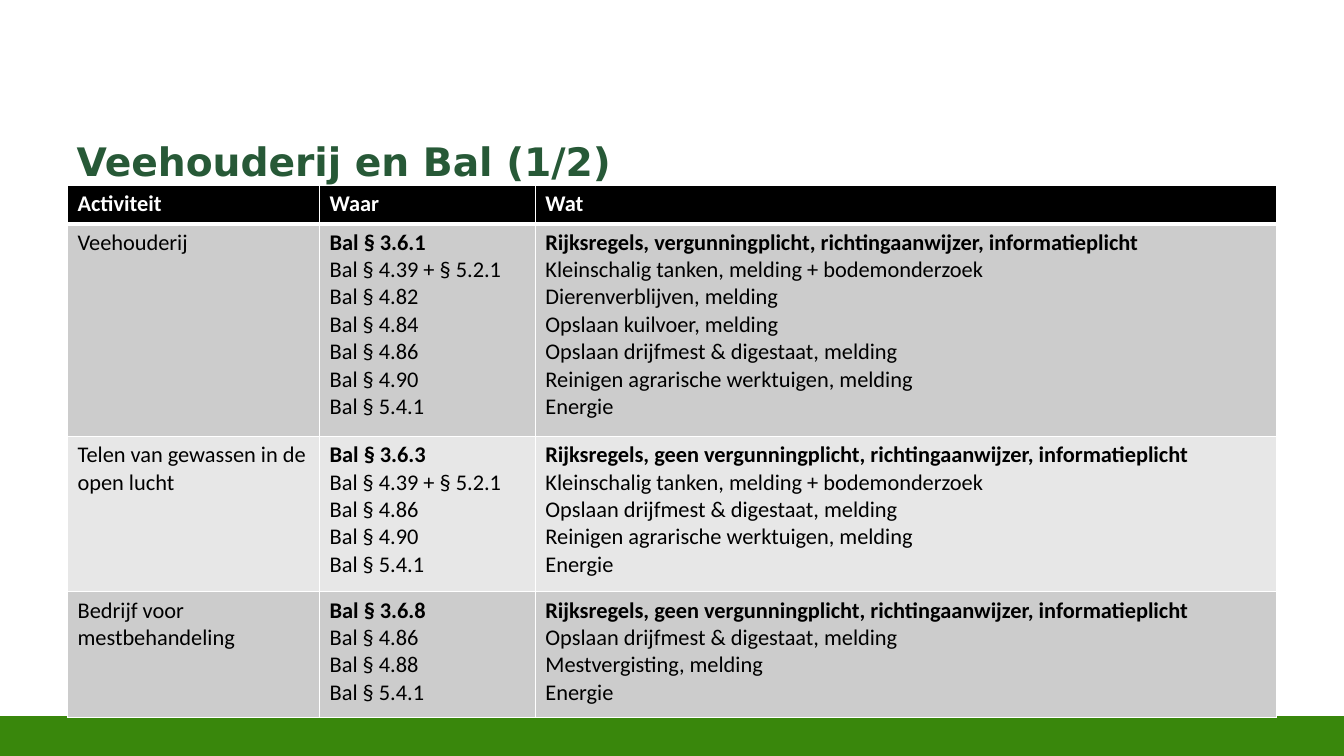
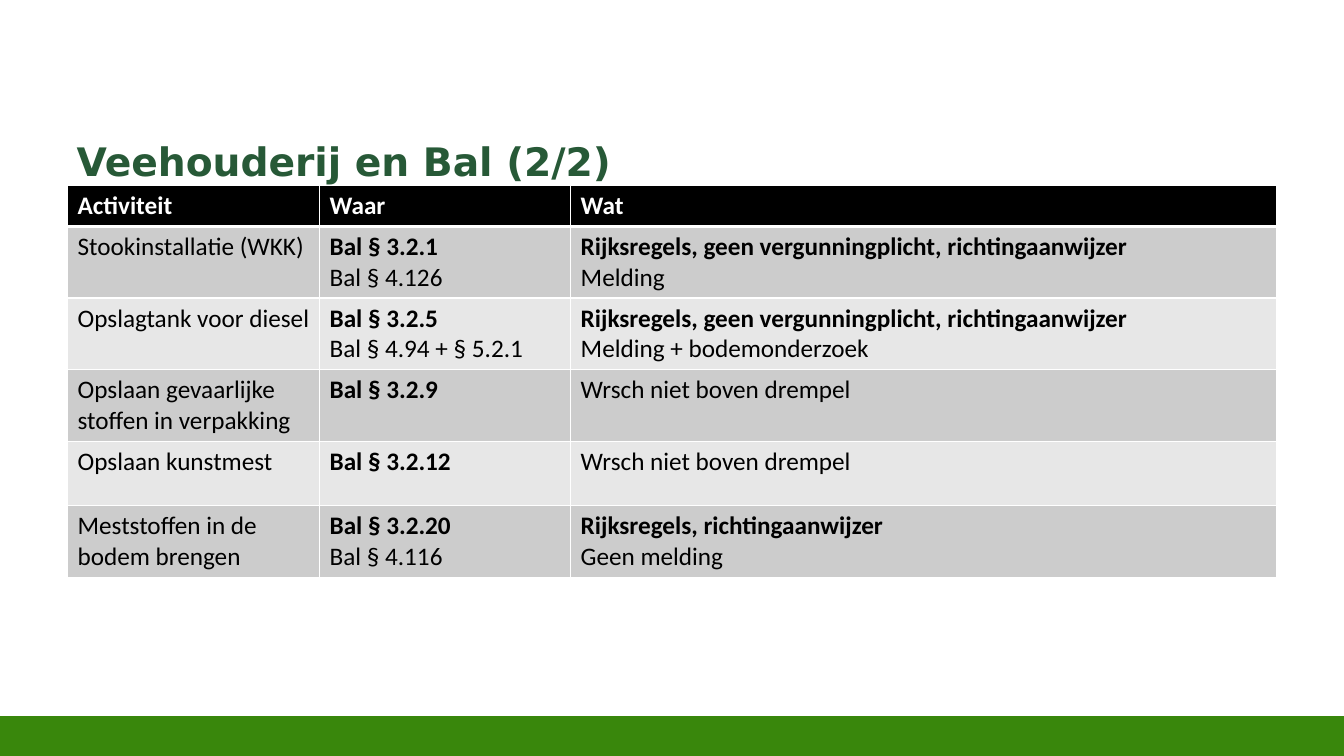
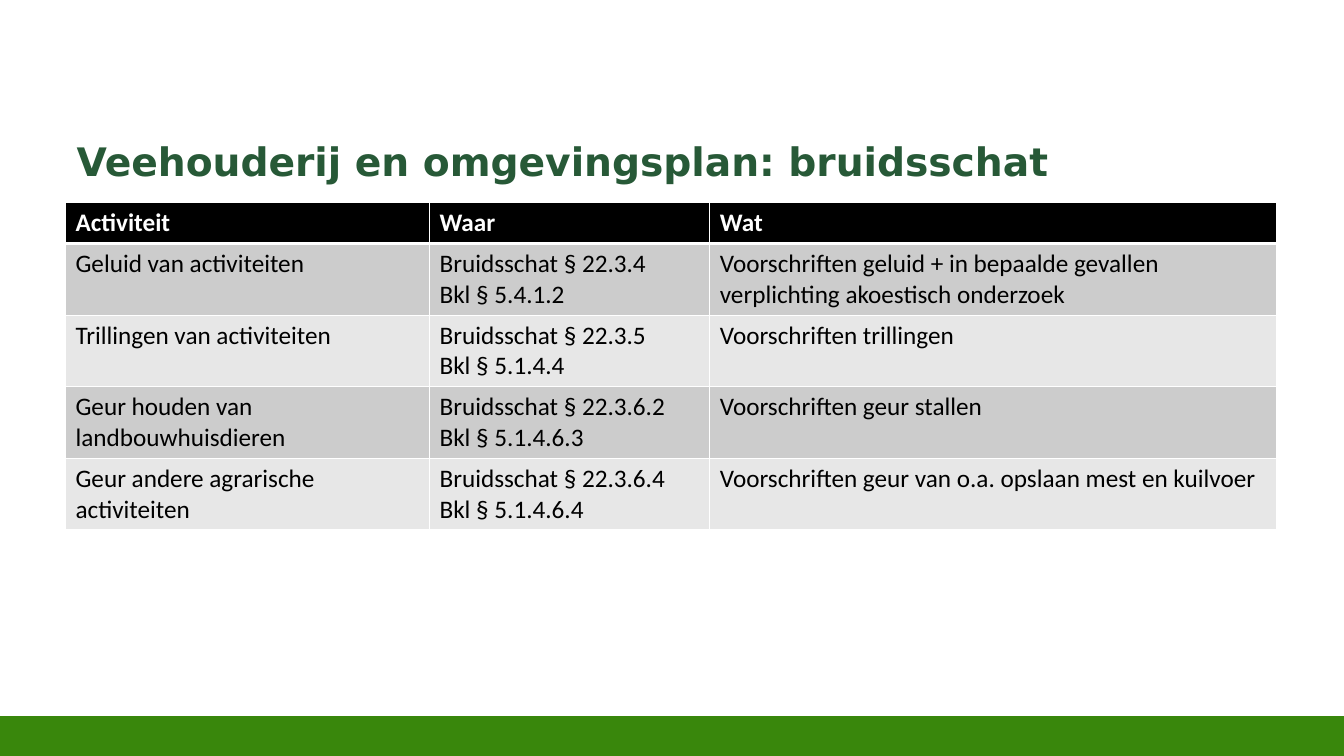
from lxml import etree
from pptx import Presentation
from pptx.dml.color import RGBColor
from pptx.enum import shapes, text
from pptx.oxml.ns import qn
from pptx.util import Inches, Pt

BAND_GREEN = RGBColor(0x39, 0x87, 0x0C)
TITLE_GREEN = RGBColor(0x27, 0x59, 0x37)
WHITE = RGBColor(0xFF, 0xFF, 0xFF)
BLACK = RGBColor(0, 0, 0)
ROW_GREYS = (RGBColor(0xCC, 0xCC, 0xCC), RGBColor(0xE7, 0xE7, 0xE7))

TITLE_FONT, TABLE_FONT = "DejaVu Sans", "Calibri"
HEADER = ("Activiteit", "Waar", "Wat")
BOLD_STARTS = ("Bal § 3.", "Rijksregels")

TANKING = "Kleinschalig tanken, melding + bodemonderzoek"
SLURRY = "Opslaan drijfmest & digestaat, melding"
CLEANING = "Reinigen agrarische werktuigen, melding"
NO_PERMIT = "Rijksregels, geen vergunningplicht, richtingaanwijzer"
NO_PERMIT_INFO = NO_PERMIT + ", informatieplicht"
BELOW_LIMIT = "Wrsch niet boven drempel"

# Each cell is one string; a line break starts a new paragraph.
PAGES = [
    {
        "title": "Veehouderij en Bal (1/2)",
        "corner": (0.67, 1.84),
        "columns": (2.5, 2.14, 7.35),
        "heights": (0.38, 2.11, 1.54, 1.25),
        "size": 16,
        "rows": [
            ("Veehouderij",
             "Bal § 3.6.1\nBal § 4.39 + § 5.2.1\nBal § 4.82\nBal § 4.84\n"
             "Bal § 4.86\nBal § 4.90\nBal § 5.4.1",
             "Rijksregels, vergunningplicht, richtingaanwijzer, informatieplicht\n"
             f"{TANKING}\nDierenverblijven, melding\nOpslaan kuilvoer, melding\n"
             f"{SLURRY}\n{CLEANING}\nEnergie"),
            ("Telen van gewassen in de open lucht",
             "Bal § 3.6.3\nBal § 4.39 + § 5.2.1\nBal § 4.86\nBal § 4.90\nBal § 5.4.1",
             f"{NO_PERMIT_INFO}\n{TANKING}\n{SLURRY}\n{CLEANING}\nEnergie"),
            ("Bedrijf voor mestbehandeling",
             "Bal § 3.6.8\nBal § 4.86\nBal § 4.88\nBal § 5.4.1",
             f"{NO_PERMIT_INFO}\n{SLURRY}\nMestvergisting, melding\nEnergie"),
        ],
    },
    {
        "title": "Veehouderij en Bal (2/2)",
        "corner": (0.67, 1.84),
        "columns": (2.5, 2.49, 7),
        "heights": (0.4, 0.71, 0.71, 0.71, 0.64, 0.71),
        "size": 18,
        "rows": [
            ("Stookinstallatie (WKK)", "Bal § 3.2.1\nBal § 4.126",
             f"{NO_PERMIT}\nMelding"),
            ("Opslagtank voor diesel", "Bal § 3.2.5\nBal § 4.94 + § 5.2.1",
             f"{NO_PERMIT}\nMelding + bodemonderzoek"),
            ("Opslaan gevaarlijke stoffen in verpakking", "Bal § 3.2.9", BELOW_LIMIT),
            ("Opslaan kunstmest", "Bal § 3.2.12", BELOW_LIMIT),
            ("Meststoffen in de bodem brengen", "Bal § 3.2.20\nBal § 4.116",
             "Rijksregels, richtingaanwijzer\nGeen melding"),
        ],
    },
    {
        "title": "Veehouderij en omgevingsplan: bruidsschat",
        "corner": (0.65, 2.01),
        "columns": (3.61, 2.78, 5.62),
        "heights": (0.4, 0.71, 0.71, 0.71, 0.71),
        "size": 18,
        "rows": [
            ("Geluid van activiteiten", "Bruidsschat § 22.3.4\nBkl § 5.4.1.2",
             "Voorschriften geluid + in bepaalde gevallen verplichting akoestisch onderzoek"),
            ("Trillingen van activiteiten", "Bruidsschat § 22.3.5\nBkl § 5.1.4.4",
             "Voorschriften trillingen"),
            ("Geur houden van landbouwhuisdieren", "Bruidsschat § 22.3.6.2\nBkl § 5.1.4.6.3",
             "Voorschriften geur stallen"),
            ("Geur andere agrarische activiteiten", "Bruidsschat § 22.3.6.4\nBkl § 5.1.4.6.4",
             "Voorschriften geur van o.a. opslaan mest en kuilvoer"),
        ],
    },
]


def move_band_to_layout(page):
    """Draw the green band and hand it to the layout, so every slide shows it."""
    band = page.shapes.add_shape(shapes.MSO_SHAPE.RECTANGLE, 0, Inches(7.12),
                                 Inches(13.33), Inches(0.38))
    band.shadow.inherit = False
    band.fill.solid()
    band.fill.fore_color.rgb = BAND_GREEN
    band.line.color.rgb = BAND_GREEN
    band.line.width = Pt(2)
    page.slide_layout.shapes._spTree.insert(2, band._element)


def set_title(page, words):
    title = page.shapes.title
    title.left, title.top = Inches(0.66), Inches(1.28)
    title.width, title.height = Inches(12), Inches(0.73)
    frame = title.text_frame
    frame.text = words
    frame.word_wrap = True
    frame.auto_size = text.MSO_AUTO_SIZE.NONE
    frame.vertical_anchor = text.MSO_ANCHOR.TOP
    frame.margin_top = Inches(0.08)
    para = frame.paragraphs[0]
    para.alignment = text.PP_ALIGN.LEFT
    para.font.name, para.font.size, para.font.bold = TITLE_FONT, Pt(28), True
    para.font.color.rgb = TITLE_GREEN


def set_borders(cell, row_index):
    """White lines of 1 pt, with 3 pt between the header and the body."""
    widths = {"a:lnL": 1, "a:lnR": 1,
              "a:lnT": 3 if row_index == 1 else 1,
              "a:lnB": 3 if row_index == 0 else 1}
    properties = cell._tc.get_or_add_tcPr()
    for position, (side, width) in enumerate(widths.items()):
        line = etree.Element(qn(side), w=str(Pt(width)))
        fill = etree.SubElement(line, qn("a:solidFill"))
        etree.SubElement(fill, qn("a:srgbClr"), val=str(WHITE))
        properties.insert(position, line)


def fill_cell(cell, words, row_index, size):
    is_header = row_index == 0
    cell.fill.solid()
    cell.fill.fore_color.rgb = BLACK if is_header else ROW_GREYS[(row_index - 1) % 2]
    set_borders(cell, row_index)
    cell.text_frame.text = words
    for para in cell.text_frame.paragraphs:
        para.font.name, para.font.size = TABLE_FONT, Pt(size)
        para.font.bold = is_header or para.text.startswith(BOLD_STARTS)
        para.font.color.rgb = WHITE if is_header else BLACK


def add_rules_table(page, content):
    rows = [HEADER] + content["rows"]
    left, top = content["corner"]
    columns, heights = content["columns"], content["heights"]
    table = page.shapes.add_table(len(rows), len(columns), Inches(left), Inches(top),
                                  Inches(sum(columns)), Inches(sum(heights))).table
    for column, width in zip(table.columns, columns):
        column.width = Inches(width)
    for row_index, (row, height) in enumerate(zip(rows, heights)):
        table.rows[row_index].height = Inches(height)
        for column_index, words in enumerate(row):
            fill_cell(table.cell(row_index, column_index), words, row_index,
                      content["size"])


def main():
    deck = Presentation()
    deck.slide_width, deck.slide_height = Inches(13.33), Inches(7.5)
    title_only = deck.slide_layouts[5]
    for number, content in enumerate(PAGES):
        page = deck.slides.add_slide(title_only)
        if number == 0:
            move_band_to_layout(page)
        set_title(page, content["title"])
        add_rules_table(page, content)
    deck.save("out.pptx")


if __name__ == "__main__":
    main()
